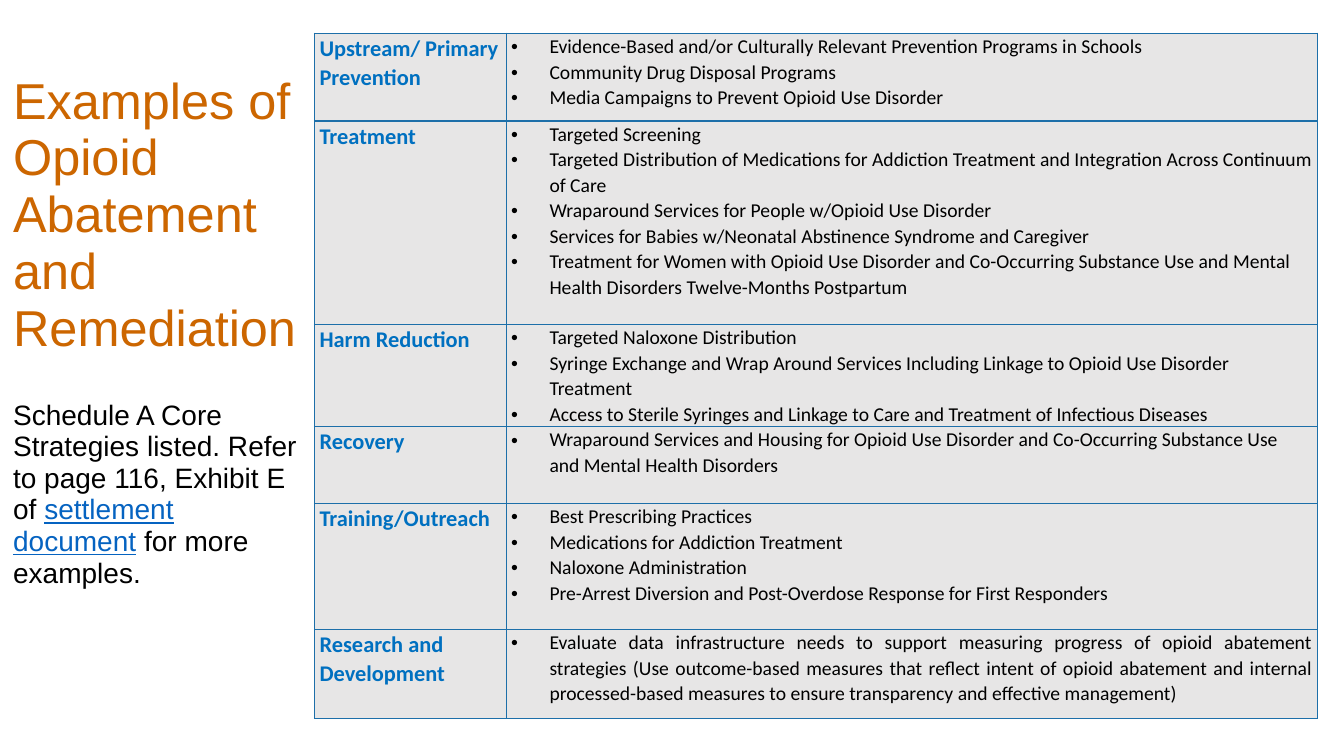
from lxml import etree
from pptx import Presentation
from pptx.dml.color import RGBColor
from pptx.enum.text import MSO_ANCHOR, MSO_AUTO_SIZE, PP_ALIGN
from pptx.oxml.ns import qn
from pptx.util import Pt

PX = 9144  # 100 px to the inch
TITLE_ONLY = 5
LEFT, JUSTIFY = PP_ALIGN.LEFT, PP_ALIGN.JUSTIFY
TOP = MSO_ANCHOR.TOP
NO_FIT = MSO_AUTO_SIZE.NONE

COLORS = {
    "title": "CC6600",
    "text": "000000",
    "link": "0563C1",
    "heading": "0070C0",
    "cell": "E7E6E6",
    "border": "1D6FA9",
}

TITLE = [
    ({"line_spacing": 0.94},
     [("Examples of Opioid Abatement and Remediation", 36, "title", False)]),
    ({"line_spacing": 0.94, "space_before": Pt(30)},
     [("Schedule A Core Strategies listed. Refer to page 116, Exhibit E of ", 20, "text", False),
      ("settlement document", 20, "link", True),
      (" for more examples.", 20, "text", False)]),
]

# Heading, row height in px, alignment, strategies
STRATEGIES = [
    ("Upstream/ Primary Prevention", 87, LEFT, [
        "Evidence-Based and/or Culturally Relevant Prevention Programs in Schools",
        "Community Drug Disposal Programs",
        "Media Campaigns to Prevent Opioid Use Disorder"]),
    ("Treatment", 202, LEFT, [
        "Targeted Screening",
        "Targeted Distribution of Medications for Addiction Treatment and Integration "
        "Across Continuum of Care",
        "Wraparound Services for People w/Opioid Use Disorder",
        "Services for Babies w/Neonatal Abstinence Syndrome and Caregiver",
        "Treatment for Women with Opioid Use Disorder and Co-Occurring Substance Use "
        "and Mental Health Disorders Twelve-Months Postpartum"]),
    ("Harm Reduction", 101, LEFT, [
        "Targeted Naloxone Distribution",
        "Syringe Exchange and Wrap Around Services Including Linkage to Opioid Use "
        "Disorder Treatment",
        "Access to Sterile Syringes and Linkage to Care and Treatment of Infectious Diseases"]),
    ("Recovery", 76, LEFT, [
        "Wraparound Services and Housing for Opioid Use Disorder and Co-Occurring "
        "Substance Use and Mental Health Disorders"]),
    ("Training/Outreach", 125, LEFT, [
        "Best Prescribing Practices",
        "Medications for Addiction Treatment",
        "Naloxone Administration",
        "Pre-Arrest Diversion and Post-Overdose Response for First Responders"]),
    ("Research and Development", 89, JUSTIFY, [
        "Evaluate data infrastructure needs to support measuring progress of opioid "
        "abatement strategies (Use outcome-based measures that reflect intent of opioid "
        "abatement and internal processed-based measures to ensure transparency and "
        "effective management)"]),
]


def set_all(target, values):
    for name, value in values.items():
        setattr(target, name, value)


class StrategyPage:
    title_font = "Arial"
    table_font = "Calibri"
    cell_format = {"margin_left": 5 * PX, "margin_right": 5 * PX,
                   "margin_top": 0, "margin_bottom": 0, "vertical_anchor": TOP}

    def __init__(self, deck):
        self.page = deck.slides.add_slide(deck.slide_layouts[TITLE_ONLY])

    def span(self, para, text, font, size, color, **extra):
        run = para.add_run()
        run.text = text
        set_all(run.font, {"name": font, "size": Pt(size), **extra})
        run.font.color.rgb = RGBColor.from_string(COLORS[color])

    def title(self, left, top, width, height, paragraphs):
        box = self.page.shapes.title
        set_all(box, {"left": left * PX, "top": top * PX,
                      "width": width * PX, "height": height * PX})
        frame = box.text_frame
        set_all(frame, {"word_wrap": True, "auto_size": NO_FIT, "vertical_anchor": TOP})
        for index, (layout, spans) in enumerate(paragraphs):
            para = frame.add_paragraph() if index else frame.paragraphs[0]
            set_all(para, {"alignment": LEFT, **layout})
            for text, size, color, underline in spans:
                self.span(para, text, self.title_font, size, color, underline=underline)

    def bullet(self, para, indent):
        properties = para._p.get_or_add_pPr()
        properties.set("marL", str(indent * PX))
        properties.set("indent", str(-indent * PX))
        etree.SubElement(properties, qn("a:buFont"), typeface="Arial")
        etree.SubElement(properties, qn("a:buChar"), char="•")

    def cell(self, cell, lines, size, color, bold, alignment, bulleted):
        set_all(cell, self.cell_format)
        for index, text in enumerate(lines):
            frame = cell.text_frame
            para = frame.add_paragraph() if index else frame.paragraphs[0]
            set_all(para, {"alignment": alignment, "line_spacing": 1.07})
            if bulleted:
                self.bullet(para, 38)
            self.span(para, text, self.table_font, size, color, bold=bold)
        # Borders come before the fill in the cell properties
        properties = cell._tc.get_or_add_tcPr()
        for side in ("a:lnL", "a:lnR", "a:lnT", "a:lnB"):
            line = etree.SubElement(properties, qn(side), w=str(Pt(1)))
            solid = etree.SubElement(line, qn("a:solidFill"))
            etree.SubElement(solid, qn("a:srgbClr"), val=COLORS["border"])
        cell.fill.solid()
        cell.fill.fore_color.rgb = RGBColor.from_string(COLORS["cell"])

    def table(self, left, top, widths, rows):
        height = sum(row[1] for row in rows)
        grid = self.page.shapes.add_table(
            len(rows), len(widths), left * PX, top * PX,
            sum(widths) * PX, height * PX).table
        for column, width in zip(grid.columns, widths):
            column.width = width * PX
        for index, (heading, row_height, alignment, items) in enumerate(rows):
            grid.rows[index].height = row_height * PX
            self.cell(grid.cell(index, 0), [heading], 16, "heading", True, LEFT, False)
            self.cell(grid.cell(index, 1), items, 14, "text", False, alignment, True)


def main():
    deck = Presentation()
    set_all(deck, {"slide_width": 1333 * PX, "slide_height": 750 * PX})
    page = StrategyPage(deck)

    # Title with the reference below it
    page.title(3, 68, 309, 517, TITLE)

    # Core strategies
    page.table(312, 33, [190, 805], STRATEGIES)

    deck.save("out.pptx")


if __name__ == "__main__":
    main()
